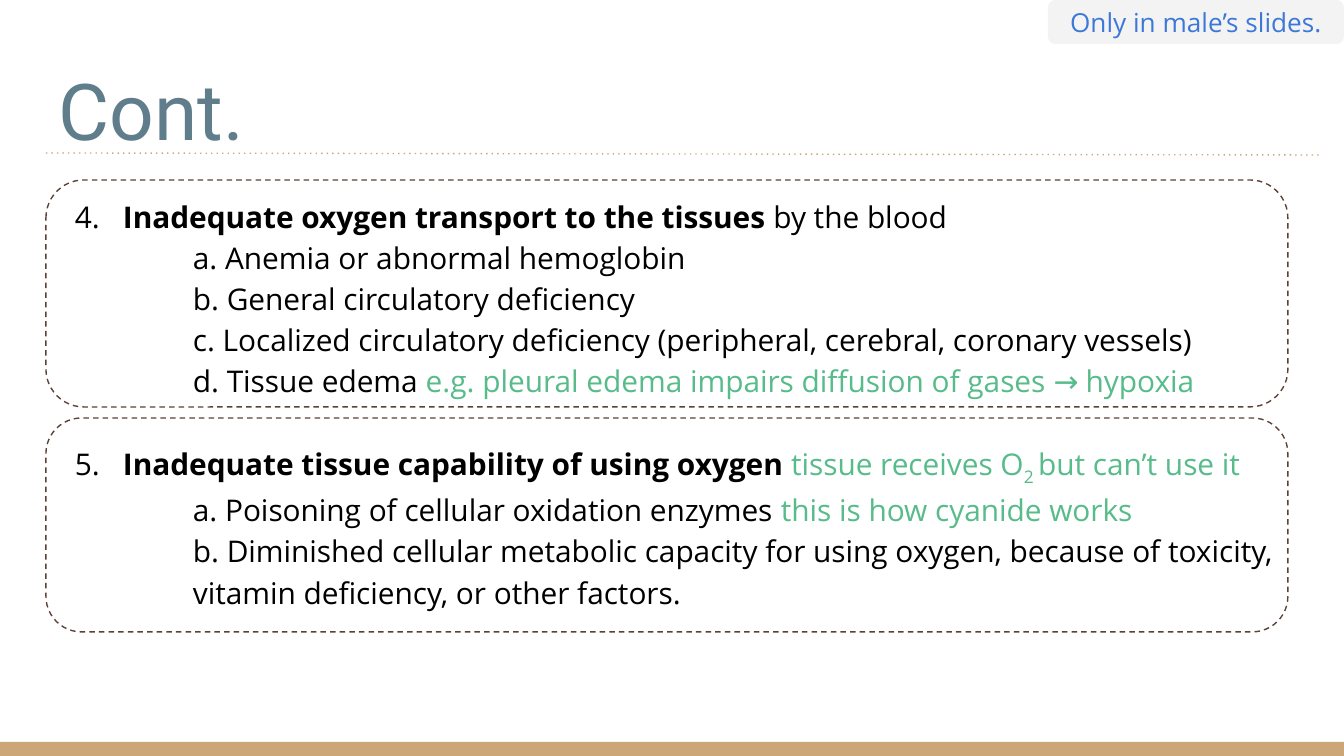
import pptx
import pptx.dml.color
import pptx.enum.dml
import pptx.enum.shapes
import pptx.enum.text
import pptx.oxml.ns
import pptx.util
from lxml import etree

RGBColor = pptx.dml.color.RGBColor
SHAPE = pptx.enum.shapes.MSO_SHAPE
ANCHOR = pptx.enum.text.MSO_ANCHOR
DASH = pptx.enum.dml.MSO_LINE

BLACK = RGBColor(0x00, 0x00, 0x00)
GREEN = RGBColor(0x57, 0xBB, 0x8A)
BLUE = RGBColor(0x3C, 0x78, 0xD8)
SLATE = RGBColor(0x60, 0x7D, 0x8B)
BROWN = RGBColor(0x5D, 0x40, 0x37)
TAN = RGBColor(0xCC, 0xA6, 0x77)
PALE = RGBColor(0xF3, 0xF3, 0xF3)

PX_PER_INCH = 134.4
INSET = 13
HEADING_INDENT = (64, -48)
ITEM_INDENT = (134, 0)

CAUSES = [
    (
        [("4.\t", ""), ("Inadequate oxygen transport to the tissues", "bold"), (" by the blood", "")],
        [
            [("a. Anemia or abnormal hemoglobin", "")],
            [("b. General circulatory deficiency", "")],
            [("c. Localized circulatory deficiency (peripheral, cerebral, coronary vessels)", "")],
            [("d. Tissue edema ", ""), ("e.g. pleural edema impairs diffusion of gases → hypoxia", "note")],
        ],
    ),
    (
        [
            ("5.\t", ""),
            ("Inadequate tissue capability of using oxygen ", "bold"),
            ("tissue receives O", "note"),
            ("2 ", "note subscript"),
            ("but can’t use it", "note"),
        ],
        [
            [("a. Poisoning of cellular oxidation enzymes ", ""), ("this is how cyanide works", "note")],
            [("b. Diminished cellular metabolic capacity for using oxygen, because of toxicity, "
              "vitamin deficiency, or other factors.", "")],
        ],
    ),
]


def px(length):
    return pptx.util.Emu(round(length * 914400 / PX_PER_INCH))


def add_panel(page, kind, bounds, fill=None, line=None):
    panel = page.shapes.add_shape(kind, *map(px, bounds))
    panel.shadow.inherit = False
    if fill is None:
        panel.fill.background()
    else:
        panel.fill.solid()
        panel.fill.fore_color.rgb = fill
    if line is None:
        panel.line.fill.background()
    else:
        panel.line.color.rgb = line
        panel.line.width = pptx.util.Pt(0.75)
        panel.line.dash_style = DASH.DASH
    return panel


def set_frame(shape, anchor):
    frame = shape.text_frame
    frame.word_wrap = True
    frame.vertical_anchor = anchor
    frame.margin_left = frame.margin_right = px(INSET)
    frame.margin_top = frame.margin_bottom = px(INSET)
    return frame


def add_text_box(page, bounds, anchor):
    return set_frame(page.shapes.add_textbox(*map(px, bounds)), anchor)


def style_paragraph(para, size, color, name="Open Sans"):
    para.font.name = name
    para.font.size = pptx.util.Pt(size)
    para.font.color.rgb = color


def fill_paragraph(para, spans, indent):
    margin, first = indent
    properties = para._p.get_or_add_pPr()
    properties.set("marL", str(px(margin)))
    properties.set("indent", str(px(first)))
    para.line_spacing = 1.15
    style_paragraph(para, 16, BLACK)
    for text, style in spans:
        span = para.add_run()
        span.text = text
        if "bold" in style:
            span.font.bold = True
        if "note" in style:
            span.font.color.rgb = GREEN
        if "subscript" in style:
            span.font._element.set("baseline", "-25000")


def add_causes(page):
    frame = add_text_box(page, (46, 180, 1253, 429), ANCHOR.TOP)
    for index, (heading, items) in enumerate(CAUSES):
        para = frame.add_paragraph() if index else frame.paragraphs[0]
        if index:
            para.space_before = px(41)
        fill_paragraph(para, heading, HEADING_INDENT)
        for item in items:
            fill_paragraph(frame.add_paragraph(), item, ITEM_INDENT)


def add_title(page):
    para = add_text_box(page, (46, 47, 1253, 122), ANCHOR.BOTTOM).paragraphs[0]
    para.text = "Cont."
    style_paragraph(para, 42, SLATE, "Roboto")


def add_badge(page):
    badge = add_panel(page, SHAPE.ROUNDED_RECTANGLE, (1048, 0, 296, 44), fill=PALE)
    para = set_frame(badge, ANCHOR.MIDDLE).paragraphs[0]
    para.text = "Only in male’s slides."
    para.alignment = pptx.enum.text.PP_ALIGN.CENTER
    style_paragraph(para, 14, BLUE)


def add_dotted_rule(page, start, end):
    rule = page.shapes.add_connector(
        pptx.enum.shapes.MSO_CONNECTOR.STRAIGHT, *map(px, start + end))
    rule.line.color.rgb = TAN
    rule.line.width = pptx.util.Pt(0.75)
    rule.line.dash_style = DASH.ROUND_DOT
    qn = pptx.oxml.ns.qn
    properties = rule._element.spPr
    properties.find(".//" + qn("a:prstDash")).set("val", "dot")
    etree.SubElement(properties, qn("a:effectLst"))


def main():
    deck = pptx.Presentation()
    deck.slide_width, deck.slide_height = px(1344), px(756)
    page = deck.slides.add_slide(deck.slide_layouts[6])
    add_panel(page, SHAPE.RECTANGLE, (0, 742, 1344, 14), fill=TAN)
    for top, height in ((418, 214), (180, 227)):
        add_panel(page, SHAPE.ROUNDED_RECTANGLE, (46, top, 1242, height), line=BROWN)
    add_title(page)
    add_causes(page)
    add_badge(page)
    add_dotted_rule(page, (46, 153), (1321, 155))
    deck.save("out.pptx")


if __name__ == "__main__":
    main()
